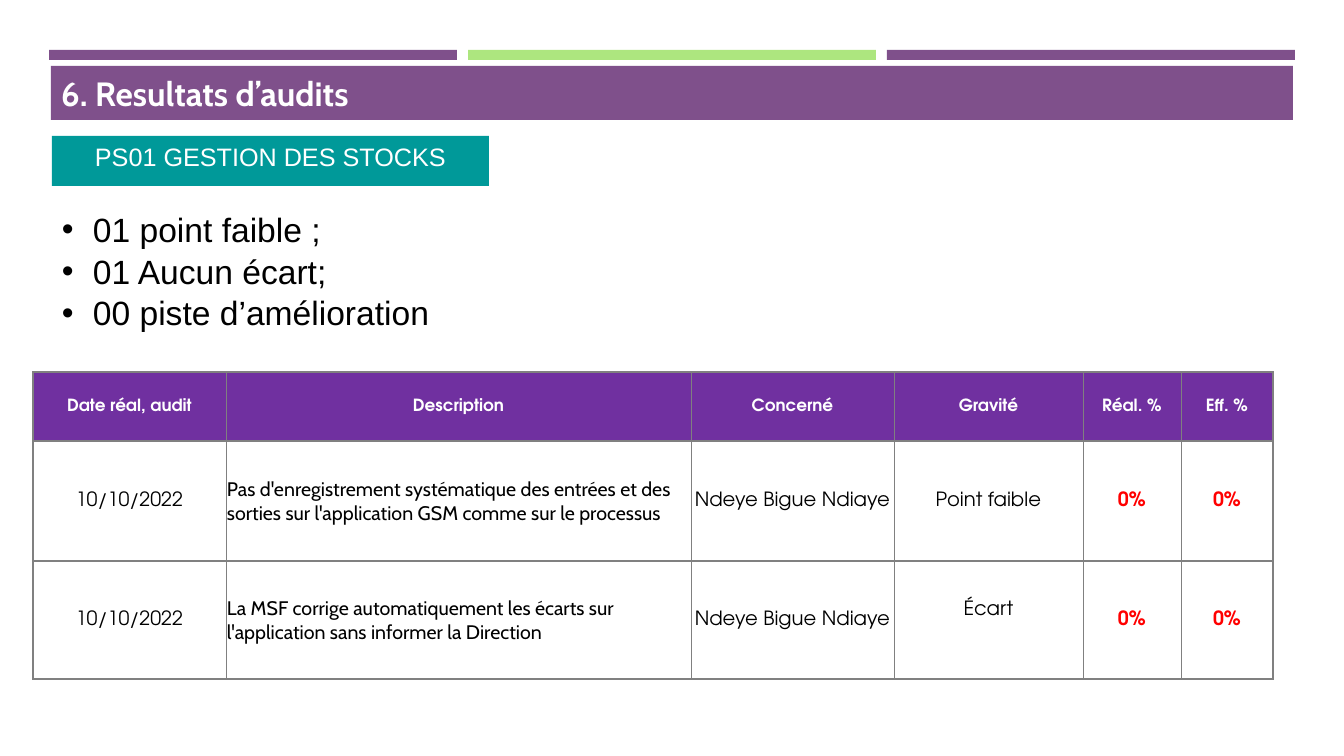
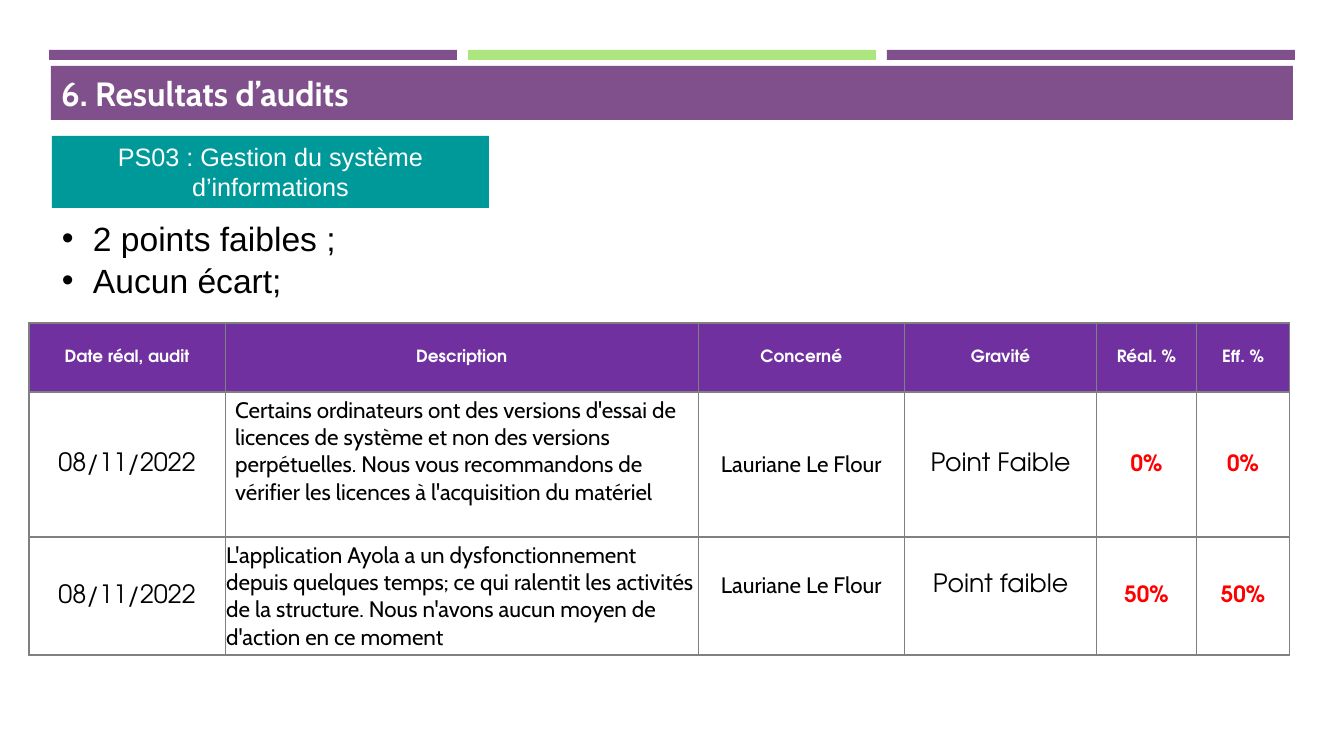
"""Build two audit result slides with a shared band, tag, list and table."""
from lxml import etree
from pptx import Presentation
from pptx.dml.color import RGBColor
from pptx.enum.shapes import MSO_SHAPE
from pptx.enum.text import MSO_ANCHOR, PP_ALIGN
from pptx.oxml.ns import qn
from pptx.util import Emu, Pt

RECT = MSO_SHAPE.RECTANGLE
TOP, MID = MSO_ANCHOR.TOP, MSO_ANCHOR.MIDDLE
LEFT, MIDDLE = PP_ALIGN.LEFT, PP_ALIGN.CENTER
WIDE, HIGH = 1344, 756
SCALE = 12192000 / WIDE

PLUM, LIME, TEAL, VIOLET = "7F508B", "ADE67F", "009999", "7030A0"
WHITE, BLACK, RED, GREY = "FFFFFF", "000000", "FF0000", "808080"
ARIAL, CABIN, ADVENTOR = "Arial", "Cabin", "TeX Gyre Adventor"

TITLE = "6. Resultats d’audits"
BARS = [PLUM, LIME, PLUM]
BAR_W, BAR_STEP = 408, 419
HEADS = ["Date réal, audit", "Description", "Concerné", "Gravité", "Réal. %", "Eff. %"]
COLS = [193, 465, 203, 189, 98, 92]
TIGHT = (1, 1, 1, 0)
LOOSE = (10, 5, 10, 5)

HEAD = dict(name=ADVENTOR, size=12, color=WHITE, bold=True)
SLIDES = [
    dict(
        tag="PS01 GESTION DES STOCKS", tag_h=50,
        points=["01 point faible ;", "01 Aucun écart;", "00 piste d’amélioration"],
        list_y=202, list_h=132,
        left=33, top=372, width=1240, heights=[69, 120, 118],
        fonts=[ADVENTOR, CABIN, ADVENTOR, ADVENTOR, ADVENTOR, ADVENTOR],
        sizes=[14] * 6,
        rows=[
            ["10/10/2022",
             "Pas d'enregistrement systématique des entrées et des sorties "
             "sur l'application GSM comme sur le processus",
             "Ndeye Bigue Ndiaye", "Point faible", "0%", "0%"],
            ["10/10/2022",
             "La MSF corrige automatiquement les écarts sur l'application "
             "sans informer la Direction",
             "Ndeye Bigue Ndiaye", "Écart", "0%", "0%"],
        ],
        insets={(2, 3): (1, 1, 1, 20)},
    ),
    dict(
        tag="PS03 : Gestion du système d’informations", tag_h=72,
        points=["2 points faibles ;", "Aucun écart;"],
        list_y=211, list_h=92,
        left=29, top=323, width=1261, heights=[69, 145, 118],
        fonts=[ADVENTOR, CABIN, CABIN, ADVENTOR, ADVENTOR, ADVENTOR],
        sizes=[18, 16, 16, 18, 16, 16],
        rows=[
            ["08/11/2022",
             "Certains ordinateurs ont des versions d'essai de licences de "
             "système et non des versions perpétuelles. Nous vous recommandons "
             "de vérifier les licences à l'acquisition du matériel",
             "Lauriane Le Flour", "Point Faible", "0%", "0%"],
            ["08/11/2022",
             "L'application Ayola a un dysfonctionnement depuis quelques temps; "
             "ce qui ralentit les activités de la structure. Nous n'avons aucun "
             "moyen de d'action en ce moment",
             "Lauriane Le Flour", "Point faible", "50%", "50%"],
        ],
        insets={(1, 1): (10, 5, 10, 31), (1, 2): LOOSE,
                (2, 2): (1, 1, 1, 22), (2, 3): (1, 1, 1, 22)},
    ),
]


def px(n):
    return Emu(round(n * SCALE))


def rgb(code):
    return RGBColor.from_string(code)


def style(para, align, name, size, color, bold=False):
    para.alignment = align
    font = para.font
    for key, val in dict(name=name, size=Pt(size), bold=bold).items():
        setattr(font, key, val)
    font.color.rgb = rgb(color)


def pad(item, insets):
    for side, val in zip(("left", "top", "right", "bottom"), insets):
        setattr(item, "margin_" + side, px(val))


def block(slide, x, y, w, h, color):
    box = slide.shapes.add_shape(RECT, px(x), px(y), px(w), px(h))
    box.shadow.inherit = False
    box.fill.solid()
    box.fill.fore_color.rgb = rgb(color)
    box.line.fill.background()
    return box


def frame(slide):
    for i, color in enumerate(BARS):
        block(slide, 49 + i * BAR_STEP, 50, BAR_W, 10, color)
    title = slide.shapes.title
    spots = dict(left=51, top=66, width=1242, height=54)
    for key, val in spots.items():
        setattr(title, key, px(val))
    title.fill.solid()
    title.fill.fore_color.rgb = rgb(PLUM)
    text = title.text_frame
    text.text = TITLE
    text.vertical_anchor = MID
    pad(text, LOOSE)
    style(text.paragraphs[0], LEFT, CABIN, 24, WHITE, True)


def label(slide, data):
    text = block(slide, 52, 136, 437, data["tag_h"], TEAL).text_frame
    text.text = data["tag"]
    text.word_wrap = True
    text.vertical_anchor = TOP
    pad(text, LOOSE)
    style(text.paragraphs[0], MIDDLE, ARIAL, 18, WHITE)


def bullets(slide, data):
    box = slide.shapes.add_textbox(px(52), px(data["list_y"]), px(444), px(data["list_h"]))
    text = box.text_frame
    text.word_wrap = True
    pad(text, LOOSE)
    for i, point in enumerate(data["points"]):
        para = text.paragraphs[0] if i == 0 else text.add_paragraph()
        para.text = point
        para.line_spacing = 1.04
        props = para._p.get_or_add_pPr()
        props.set("marL", str(px(31)))
        props.set("indent", str(-px(31)))
        etree.SubElement(props, qn("a:buFont"), typeface=ARIAL)
        etree.SubElement(props, qn("a:buChar"), char="•")
        style(para, LEFT, ARIAL, 24, BLACK)


def edges(cell, col):
    last = len(COLS) - 1
    widths = dict(L=0.5 if col else 1, R=0.5 if col < last else 1, T=1, B=1)
    props = cell._tc.get_or_add_tcPr()
    for side, width in widths.items():
        line = etree.SubElement(props, qn("a:ln" + side), w=str(Pt(width)))
        fill = etree.SubElement(line, qn("a:solidFill"))
        etree.SubElement(fill, qn("a:srgbClr"), val=GREY)


def look(row, col, data):
    if row == 0:
        return HEAD
    rate = col > 3
    return dict(name=data["fonts"][col], size=data["sizes"][col],
                color=RED if rate else BLACK, bold=rate)


def grid(slide, data):
    rows = [HEADS] + data["rows"]
    heights, width = data["heights"], data["width"]
    table = slide.shapes.add_table(
        len(rows), len(COLS), px(data["left"]), px(data["top"]),
        px(width), px(sum(heights))).table
    table.first_row = table.horz_banding = False
    for col, w in zip(table.columns, COLS):
        col.width = px(w * width / sum(COLS))
    for r, (items, high) in enumerate(zip(rows, heights)):
        table.rows[r].height = px(high)
        for c, item in enumerate(items):
            cell = table.cell(r, c)
            cell.text = item
            cell.vertical_anchor = MID
            pad(cell, data["insets"].get((r, c), TIGHT))
            edges(cell, c)
            cell.fill.solid()
            cell.fill.fore_color.rgb = rgb(WHITE if r else VIOLET)
            align = LEFT if r and c == 1 else MIDDLE
            style(cell.text_frame.paragraphs[0], align, **look(r, c, data))


def main():
    deck = Presentation()
    deck.slide_width, deck.slide_height = px(WIDE), px(HIGH)
    for data in SLIDES:
        slide = deck.slides.add_slide(deck.slide_layouts[5])
        frame(slide)
        for part in (label, bullets, grid):
            part(slide, data)
    deck.save("out.pptx")


if __name__ == "__main__":
    main()
